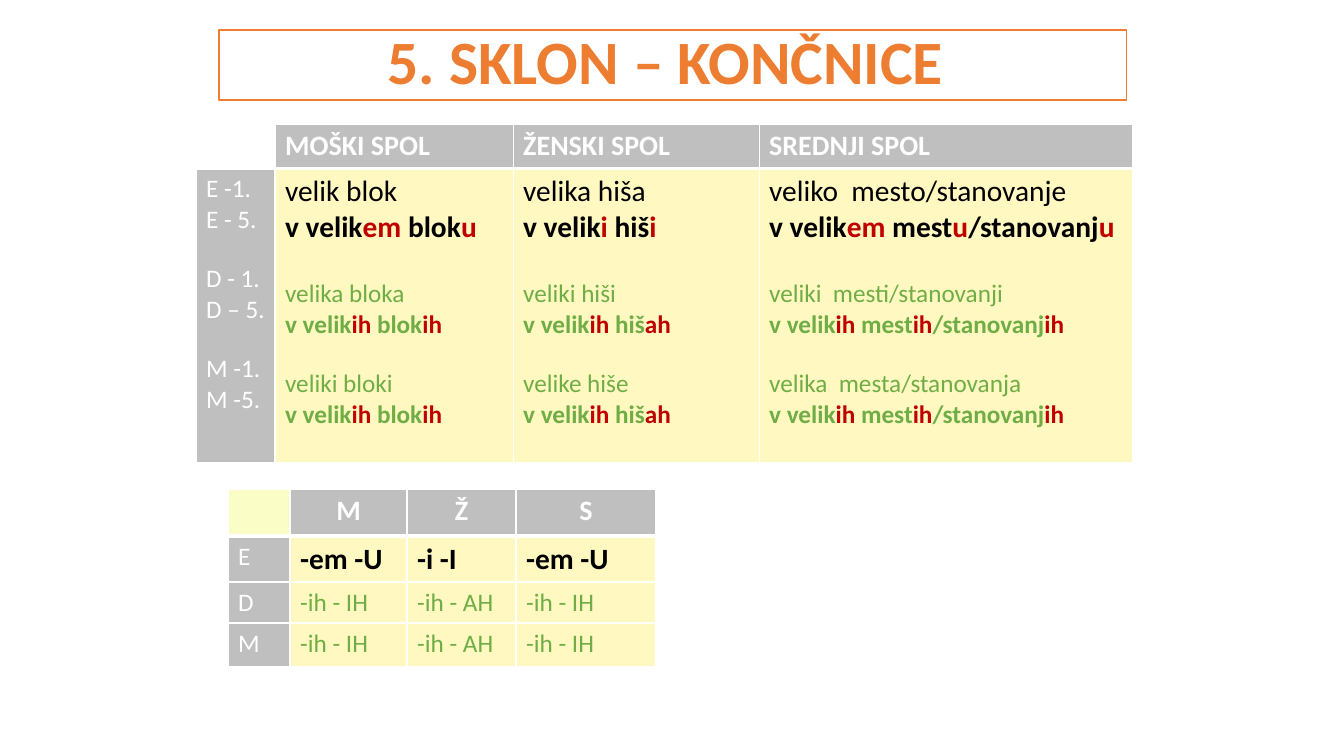
from dataclasses import dataclass

from lxml import etree
from pptx import Presentation
from pptx import util as u
from pptx.dml.color import RGBColor
from pptx.enum import text
from pptx.oxml import ns

PX = u.Inches(1) / 100.8
TITLE_ONLY = 5


@dataclass(frozen=True)
class Theme:
    font: str = "Calibri"
    white: str = "FFFFFF"
    black: str = "000000"
    orange: str = "ED7D31"
    grey: str = "BFBFBF"
    cream: str = "FFF8C1"
    lemon: str = "FAFEC6"
    green: str = "70AD47"
    red: str = "C00000"
    title: float = 44
    header: float = 20
    singular: float = 21
    small: float = 18
    gap: float = 20.5
    wide_gap: float = 23.5
    thin: float = 0.96
    thick: float = 3


def px(count):
    return u.Emu(round(count * PX))


def rgb(code):
    return RGBColor.from_string(code)


def write(para, words, *, font, size, color, accent=None, bold=False, align=None, before=0):
    """Fill a paragraph; every second part between bars takes the accent colour."""
    para.alignment = align
    para.space_before = u.Pt(before)
    for index, part in enumerate(words.split("|")):
        if not part:
            continue
        span = para.add_run()
        span.text = part
        span.font.name = font
        span.font.size = u.Pt(size)
        span.font.bold = bold
        span.font.color.rgb = rgb(accent if index % 2 else color)


class SlideBuilder:
    def __init__(self, deck, theme):
        self.theme = theme
        self.page = deck.slides.add_slide(deck.slide_layouts[TITLE_ONLY])

    def title(self, words, left, top, width, height):
        box = self.page.shapes.title
        box.left, box.top, box.width, box.height = map(px, (left, top, width, height))
        box.fill.solid()
        box.fill.fore_color.rgb = rgb(self.theme.white)
        box.line.color.rgb = rgb(self.theme.orange)
        box.line.width = u.Pt(1)
        frame = box.text_frame
        frame.auto_size = text.MSO_AUTO_SIZE.NONE
        frame.vertical_anchor = text.MSO_ANCHOR.MIDDLE
        para = frame.paragraphs[0]
        para.line_spacing = 0.9
        write(para, words, font=self.theme.font, size=self.theme.title,
              color=self.theme.orange, bold=True, align=text.PP_ALIGN.CENTER)

    def table(self, left, top, columns, rows):
        frame = self.page.shapes.add_table(
            len(rows), len(columns), px(left), px(top), px(sum(columns)), px(sum(rows)))
        grid = frame.table
        for column, width in zip(grid.columns, columns):
            column.width = px(width)
        for row, height in zip(grid.rows, rows):
            row.height = px(height)
        return grid

    def cell(self, cell, lines, fill):
        """Style one cell; lines holds pairs of words and their format."""
        self.borders(cell, bottom=self.theme.thick if cell.is_merge_origin else None)
        self.paint(cell, fill)
        frame = cell.text_frame
        for index, (words, style) in enumerate(lines):
            para = frame.add_paragraph() if index else frame.paragraphs[0]
            write(para, words, font=self.theme.font, **style)

    def borders(self, cell, bottom=None):
        thin = self.theme.thin
        properties = cell._tc.get_or_add_tcPr()
        for side, width in (("L", thin), ("R", thin), ("T", thin), ("B", bottom or thin)):
            line = etree.SubElement(properties, ns.qn(f"a:ln{side}"), w=str(u.Pt(width)))
            solid = etree.SubElement(line, ns.qn("a:solidFill"))
            etree.SubElement(solid, ns.qn("a:srgbClr"), val=self.theme.white)

    def paint(self, cell, fill):
        if fill is None:
            cell.fill.background()
        else:
            cell.fill.solid()
            cell.fill.fore_color.rgb = rgb(fill)

    def header(self, grid, names, corner, align):
        style = dict(size=self.theme.header, color=self.theme.white, bold=True, align=align)
        for index, name in enumerate(names):
            cell = grid.cell(0, index)
            self.borders(cell, self.theme.thick)
            self.paint(cell, self.theme.grey if index else corner)
            if name:
                write(cell.text_frame.paragraphs[0], name, font=self.theme.font, **style)

    def labels(self, cell, names):
        """Case labels, set in pairs with a gap before each new pair."""
        lines = [(name, dict(size=self.theme.small, color=self.theme.white,
                             before=self.theme.gap if i and i % 2 == 0 else 0))
                 for i, name in enumerate(names)]
        self.cell(cell, lines, self.theme.grey)

    def declension(self, cell, phrases):
        """Pairs of plain and inflected phrases: singular, dual, plural."""
        theme = self.theme
        gaps = {2: theme.wide_gap, 4: theme.gap}
        lines = [(phrase, dict(size=theme.singular if i < 2 else theme.small,
                               color=theme.black if i < 2 else theme.green,
                               accent=theme.red, bold=i % 2 == 1, before=gaps.get(i, 0)))
                 for i, phrase in enumerate(phrases)]
        self.cell(cell, lines, theme.cream)

    def ending(self, cell, words, singular):
        theme = self.theme
        style = dict(size=theme.singular if singular else theme.small,
                     color=theme.black if singular else theme.green, bold=singular)
        self.cell(cell, [(words, style)], theme.cream)


GENDERS = ["", "MOŠKI SPOL", "ŽENSKI SPOL", "SREDNJI SPOL"]
CASES = ["E -1.", "E - 5.", "D - 1.", "D – 5.", "M -1.", "M -5."]
PHRASES = [
    ["velik blok", "v velik|em| blok|u|",
     "velika bloka", "v velik|ih| blok|ih|",
     "veliki bloki", "v velik|ih| blok|ih|"],
    ["velika hiša", "v velik|i| hiš|i|",
     "veliki hiši", "v velik|ih| hiš|ah|",
     "velike hiše", "v velik|ih| hiš|ah|"],
    ["veliko  mesto/stanovanje", "v velik|em| mest|u|/stanovanj|u|",
     "veliki  mesti/stanovanji", "v velik|ih| mest|ih|/stanovanj|ih|",
     "velika  mesta/stanovanja", "v velik|ih| mest|ih|/stanovanj|ih|"],
]
ENDINGS = {
    "E": ["-em -U", "-i -I", "-em -U"],
    "D": ["-ih - IH", "-ih - AH", "-ih - IH"],
    "M": ["-ih - IH", "-ih - AH", "-ih - IH"],
}


def main():
    deck = Presentation()
    deck.slide_width, deck.slide_height = u.Inches(13.33), u.Inches(7.5)
    theme = Theme()
    slide = SlideBuilder(deck, theme)
    slide.title("5. SKLON – KONČNICE ", 219, 30, 907, 70)

    examples = slide.table(196, 124, [79, 238, 246, 373], [44, 294])
    slide.header(examples, GENDERS, None, text.PP_ALIGN.LEFT)
    slide.labels(examples.cell(1, 0), CASES)
    for column, phrases in enumerate(PHRASES, 1):
        slide.declension(examples.cell(1, column), phrases)

    summary = slide.table(228, 489, [62, 117, 109, 140], [47, 46, 41, 44])
    slide.header(summary, ["", "M", "Ž", "S"], theme.lemon, text.PP_ALIGN.CENTER)
    for row, (number, endings) in enumerate(ENDINGS.items(), 1):
        slide.labels(summary.cell(row, 0), [number])
        for column, words in enumerate(endings, 1):
            slide.ending(summary.cell(row, column), words, singular=row == 1)

    deck.save("out.pptx")


if __name__ == "__main__":
    main()
